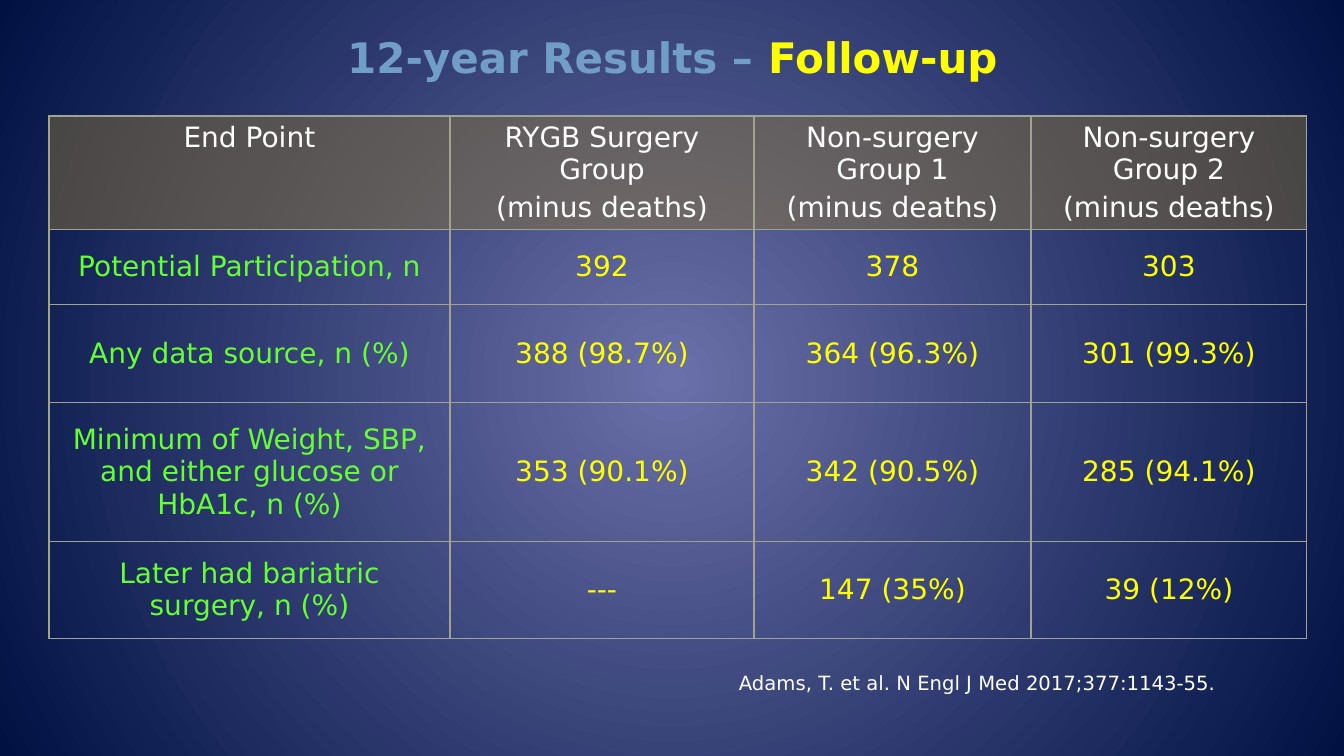
from pptx import Presentation
from pptx.dml.color import RGBColor
from pptx.enum.text import MSO_ANCHOR, PP_ALIGN
from pptx.oxml import parse_xml
from pptx.oxml.ns import nsdecls, qn
from pptx.util import Pt

EMU_PER_PX = 914400 / 100.8
CENTER, LEFT = PP_ALIGN.CENTER, PP_ALIGN.LEFT
TOP, MIDDLE = MSO_ANCHOR.TOP, MSO_ANCHOR.MIDDLE
FONT = "DejaVu Sans"

GLOW = RGBColor(0x6A, 0x70, 0xA9)
NAVY = RGBColor(0x00, 0x11, 0x42)
STEEL = RGBColor(0x71, 0x9E, 0xC7)
YELLOW = RGBColor(0xFF, 0xFF, 0x00)
GREEN = RGBColor(0x66, 0xFF, 0x33)
WHITE = RGBColor(0xFF, 0xFF, 0xFF)
BROWN = RGBColor(0x84, 0x70, 0x3C)
BORDER = RGBColor(0xA2, 0xA2, 0x91)

COLUMN_WIDTHS = [401, 304, 277, 276]
ROW_HEIGHTS = [113, 75, 98, 139, 97]
ROWS = [
    ["End Point", "RYGB Surgery Group\n(minus deaths)",
     "Non-surgery Group 1\n(minus deaths)", "Non-surgery Group 2\n(minus deaths)"],
    ["Potential Participation, n", "392", "378", "303"],
    ["Any data source, n (%)", "388 (98.7%)", "364 (96.3%)", "301 (99.3%)"],
    ["Minimum of Weight, SBP, and either glucose or HbA1c, n (%)",
     "353 (90.1%)", "342 (90.5%)", "285 (94.1%)"],
    ["Later had bariatric surgery, n (%)", "---", "147 (35%)", "39 (12%)"],
]


def px(value):
    return round(value * EMU_PER_PX)


def set_attributes(target, values):
    for name, value in values.items():
        setattr(target, name, value)


def add_run(paragraph, text, size, color, bold=False):
    run = paragraph.add_run()
    run.text = text
    set_attributes(run.font, {"name": FONT, "size": Pt(size), "bold": bold})
    run.font.color.rgb = color


def set_background(slide):
    """Radial gradient, light in the centre."""
    background = parse_xml(
        f'<p:bg {nsdecls("p", "a")}><p:bgPr><a:gradFill rotWithShape="1"><a:gsLst>'
        f'<a:gs pos="0"><a:srgbClr val="{GLOW}"/></a:gs>'
        f'<a:gs pos="100000"><a:srgbClr val="{NAVY}"/></a:gs></a:gsLst>'
        '<a:path path="circle"><a:fillToRect l="50000" t="50000" r="50000" b="50000"/>'
        '</a:path></a:gradFill><a:effectLst/></p:bgPr></p:bg>')
    slide.element.cSld.insert(0, background)


def add_title(slide, parts):
    title = slide.shapes.title
    set_attributes(title, {"left": px(244), "top": px(28),
                           "width": px(857), "height": px(63)})
    set_attributes(title.text_frame, {"vertical_anchor": MIDDLE, "word_wrap": True})
    paragraph = title.text_frame.paragraphs[0]
    set_attributes(paragraph, {"alignment": CENTER, "line_spacing": 0.9})
    for text, color in parts:
        add_run(paragraph, text, 30, color, bold=True)


def add_borders(cell):
    properties = cell._tc.get_or_add_tcPr()
    for index, side in enumerate(["lnL", "lnR", "lnT", "lnB"]):
        properties.insert(index, parse_xml(
            f'<a:{side} {nsdecls("a")} w="{Pt(1)}"><a:solidFill>'
            f'<a:srgbClr val="{BORDER}"/></a:solidFill></a:{side}>'))


def fill_header(cell):
    cell.fill.solid()
    cell.fill.fore_color.rgb = BROWN
    color = cell._tc.tcPr.find(f'{qn("a:solidFill")}/{qn("a:srgbClr")}')
    color.append(parse_xml(f'<a:alpha {nsdecls("a")} val="50000"/>'))


def format_cell(cell, text, color, anchor):
    cell.vertical_anchor = anchor
    frame = cell.text_frame
    for index, line in enumerate(text.split("\n")):
        paragraph = frame.add_paragraph() if index else frame.paragraphs[0]
        set_attributes(paragraph, {"alignment": CENTER, "space_before": Pt(4)})
        add_run(paragraph, line, 20, color)
    add_borders(cell)


def add_results_table(slide):
    table = slide.shapes.add_table(
        len(ROWS), len(COLUMN_WIDTHS), px(49), px(116),
        px(sum(COLUMN_WIDTHS)), px(sum(ROW_HEIGHTS))).table
    set_attributes(table, {"first_row": False, "horz_banding": False})
    for column, width in zip(table.columns, COLUMN_WIDTHS):
        column.width = px(width)
    for row, height, texts in zip(table.rows, ROW_HEIGHTS, ROWS):
        row.height = px(height)
        is_header = texts is ROWS[0]
        for index, (cell, text) in enumerate(zip(row.cells, texts)):
            if is_header:
                fill_header(cell)
                format_cell(cell, text, WHITE, TOP)
            else:
                cell.fill.background()
                format_cell(cell, text, YELLOW if index else GREEN, MIDDLE)


def add_citation(slide, text):
    frame = slide.shapes.add_textbox(px(729), px(666), px(522), px(34)).text_frame
    frame.word_wrap = True
    paragraph = frame.paragraphs[0]
    paragraph.alignment = LEFT
    add_run(paragraph, text, 14, WHITE)


def main():
    presentation = Presentation()
    set_attributes(presentation, {"slide_width": px(1344), "slide_height": px(756)})
    slide = presentation.slides.add_slide(presentation.slide_layouts[5])
    set_background(slide)
    # Heading
    add_title(slide, [("12-year Results – ", STEEL), ("Follow-up", YELLOW)])
    # Follow-up figures and their source
    add_results_table(slide)
    add_citation(slide, "Adams, T. et al. N Engl J Med 2017;377:1143-55.")
    presentation.save("out.pptx")


if __name__ == "__main__":
    main()
